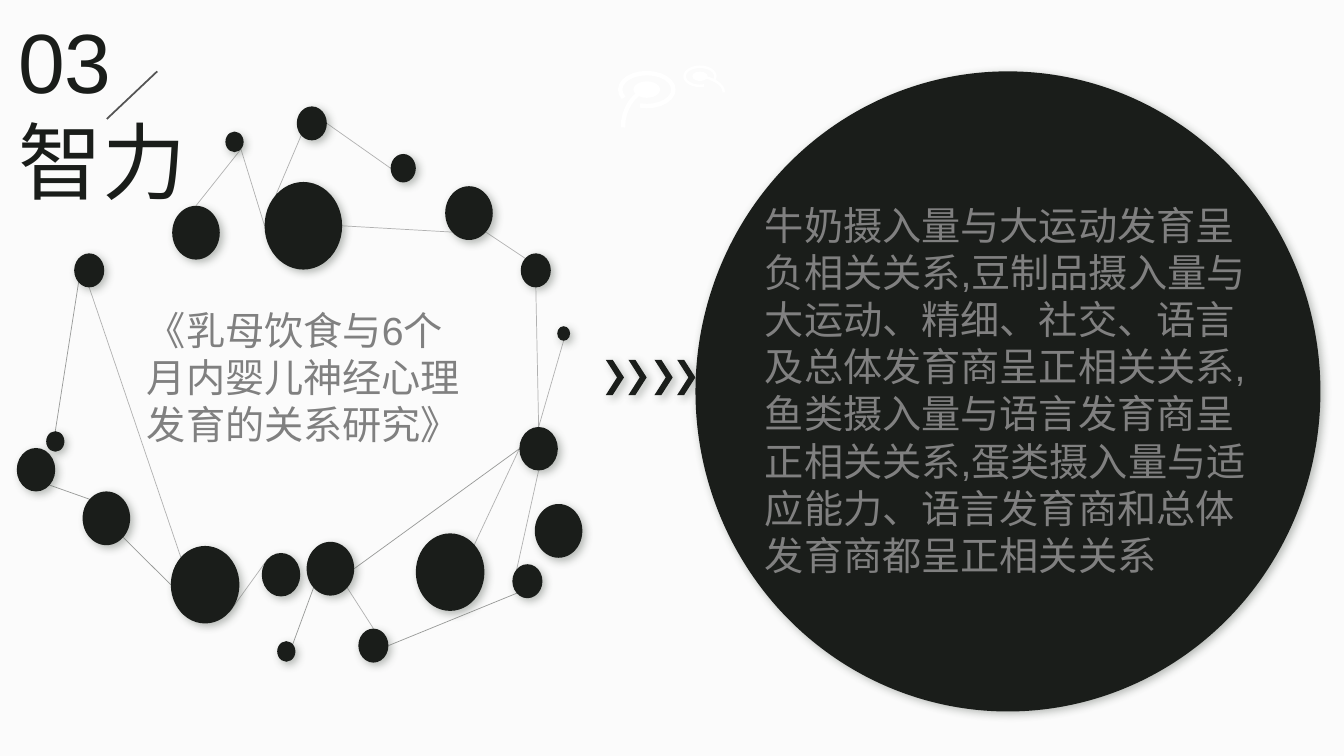
"""Build the slide on milk intake and infant development."""
import math

from lxml import etree
from pptx import Presentation, util as u
from pptx.dml.color import RGBColor
from pptx.enum import shapes, text
from pptx.oxml.ns import qn

INK = RGBColor(0x1A, 0x1D, 0x1A)
LINE_GREY = RGBColor(0x54, 0x54, 0x54)
TEXT_GREY = RGBColor(0x80, 0x80, 0x80)
WHITE = RGBColor(0xFF, 0xFF, 0xFF)
BACKDROP = RGBColor(0xFB, 0xFB, 0xFB)
SHADOW = RGBColor(0x50, 0x59, 0x50)

DOT_RATIO = 1.13
DOTS_BY_WIDTH = {
    9.2: {"M": (398, 233)},
    13: {"B": (198, 458), "H": (161, 94), "O": (33, 308)},
    18: {"J": (279, 110)},
    21.5: {"A": (366, 403), "F": (53, 181), "I": (212, 76), "L": (372, 181), "S": (256, 449)},
    27.5: {"C": (12, 320), "D": (187, 395), "E": (371, 305)},
    34: {"G": (123, 147), "K": (318, 133), "P": (59, 351), "R": (219, 387), "U": (382, 360)},
    49: {"Q": (122, 390), "T": (297, 381)},
    55.4: {"N": (189, 130)},
}
COMPASS = ["E", "SE", "S", "SW", "W", "NW", "N", "NE"]
GREY_LINKS = ["K.SW N.E", "E.N L.S", "H.SE G.N", "R.SE S.N", "F.S Q.NW", "M.S E.N", "D.NW Q.SE",
              "K.SE L.NW", "I.E J.W", "I.SW N.NW", "E.W T.NE", "E.S A.NW", "H.SE N.W"]
DARK_LINKS = ["E.W R.E", "Q.W P.SE", "O.N F.SW", "P.NW C.SE", "A.SW S.E", "R.SW B.S"]
STUDY = "《乳母饮食与6个月内婴儿神经心理发育的关系研究》"
FINDING = ("牛奶摄入量与大运动发育呈负相关关系,豆制品摄入量与大运动、精细、社交、"
           "语言及总体发育商呈正相关关系,鱼类摄入量与语言发育商呈正相关关系,"
           "蛋类摄入量与适应能力、语言发育商和总体发育商都呈正相关关系")


def set_alpha(color_element, percent):
    """Give a colour element an opacity in percent."""
    etree.SubElement(color_element, qn("a:alpha")).set("val", str(percent * 1000))


def add_solid(page, kind, bounds, color):
    """Add a preset shape with a plain fill."""
    shape = page.shapes.add_shape(kind, *map(u.Pt, bounds))
    shape.fill.solid()
    shape.fill.fore_color.rgb = color
    shape.line.fill.background()
    shape.shadow.inherit = False
    return shape


def add_shadowed(page, kind, bounds):
    """Add a dark preset shape with a soft shadow."""
    shape = add_solid(page, kind, bounds, INK)
    effects = shape._element.spPr.find(qn("a:effectLst"))
    shadow = etree.SubElement(effects, qn("a:outerShdw"), blurRad=str(u.Pt(6)),
                              dist=str(u.Pt(3)), dir="2700000", algn="tl", rotWithShape="0")
    set_alpha(etree.SubElement(shadow, qn("a:srgbClr"), val=str(SHADOW)), 40)
    return shape


def add_line(page, ends, color, weight, opacity=100):
    """Add a straight line between two points."""
    line = page.shapes.add_connector(shapes.MSO_CONNECTOR.STRAIGHT, *map(u.Pt, ends))
    line.line.color.rgb = color
    line.line.width = u.Pt(weight)
    if opacity < 100:
        set_alpha(line._element.spPr.find(".//" + qn("a:srgbClr")), opacity)
    etree.SubElement(line._element.spPr, qn("a:effectLst"))


def rim_point(dots, anchor):
    """Return the point on a dot's rim that an anchor such as K.SW names."""
    name, side = anchor.split(".")
    left, top, width, height = dots[name]
    angle = COMPASS.index(side) * math.pi / 4
    return (left + width / 2 * (1 + math.cos(angle)),
            top + height / 2 * (1 + math.sin(angle)))


def add_network(page):
    """Add the ring of linked dots, with the dots over the links."""
    dots = {name: (left, top, width, width * DOT_RATIO)
            for width, places in DOTS_BY_WIDTH.items()
            for name, (left, top) in places.items()}
    for links, color in ((GREY_LINKS, LINE_GREY), (DARK_LINKS, INK)):
        for link in links:
            start, end = link.split()
            add_line(page, rim_point(dots, start) + rim_point(dots, end), color, 0.5, 43)
    for bounds in dots.values():
        add_shadowed(page, shapes.MSO_SHAPE.OVAL, bounds)


def add_stroke(page, points, weight):
    """Add an open white stroke through the points."""
    builder = page.shapes.build_freeform(*points[0], scale=u.Pt(1) / 100)
    builder.add_line_segments(points[1:], close=False)
    stroke = builder.convert_to_shape()
    stroke.fill.background()
    stroke.line.color.rgb = WHITE
    stroke.line.width = u.Pt(weight)
    stroke.shadow.inherit = False


def add_swirl(page, center, radius, tail, side):
    """Add an open oval loop around a small head with a curved tail."""
    x, y = center
    tail_x, tail_y = tail
    turns = [math.radians(degrees) for degrees in range(-210, 106, 15)]
    loop = [(100 * (x + side * radius * math.cos(turn)),
             100 * (y + 0.62 * radius * math.sin(turn))) for turn in turns]
    steps = [step / 8 for step in range(9)]
    curve = [(100 * (x + tail_x * math.sin(step * math.pi / 2)),
              100 * (y + tail_y * step ** 1.5)) for step in steps]
    add_stroke(page, loop, radius / 6)
    add_stroke(page, curve, radius / 6)
    head = radius / 2
    add_solid(page, shapes.MSO_SHAPE.OVAL,
              (x - head, y - head * 0.62, 2 * head, 2 * head * 0.62), WHITE)


def add_text(page, bounds, lines, size, color, align=None):
    """Add a wrapping text box with one paragraph per line."""
    box = page.shapes.add_textbox(*map(u.Pt, bounds))
    frame = box.text_frame
    frame.word_wrap = True
    frame.auto_size = text.MSO_AUTO_SIZE.SHAPE_TO_FIT_TEXT
    for index, line in enumerate(lines):
        para = frame.add_paragraph() if index else frame.paragraphs[0]
        para.alignment = align
        span = para.add_run()
        span.text = line
        span.font.name = "Arial"
        span.font.size = u.Pt(size)
        span.font.color.rgb = color


def main():
    """Build and save the deck."""
    deck = Presentation()
    deck.slide_width, deck.slide_height = u.Pt(960), u.Pt(540)
    page = deck.slides.add_slide(deck.slide_layouts[6])
    page.background.fill.solid()
    page.background.fill.fore_color.rgb = BACKDROP

    for pair in range(2):
        for member in range(2):
            left = 432.7 + 34.8 * pair + 16.2 * member
            chevron = add_shadowed(page, shapes.MSO_SHAPE.CHEVRON, (left, 257, 13, 25.2))
            chevron.adjustments[0] = 0.62
    add_network(page)
    add_shadowed(page, shapes.MSO_SHAPE.OVAL, (496.8, 51, 446.4, 457.2))

    add_text(page, (5.8, 2.9, 170.6, 152.6), ["03", "智力"], 60, INK, text.PP_ALIGN.JUSTIFY)
    add_line(page, (112.3, 51, 76.3, 85), LINE_GREY, 1.25)
    add_swirl(page, (462, 64), 19, (-17, 27), 1)
    add_swirl(page, (500, 54.5), 11, (17, 11.5), -1)
    add_text(page, (97.9, 215.3, 251.3, 108.7), [STUDY], 28, TEXT_GREY)
    add_text(page, (539.3, 140.4, 361.4, 278.6), [FINDING], 28, TEXT_GREY)
    deck.save("out.pptx")


if __name__ == "__main__":
    main()
